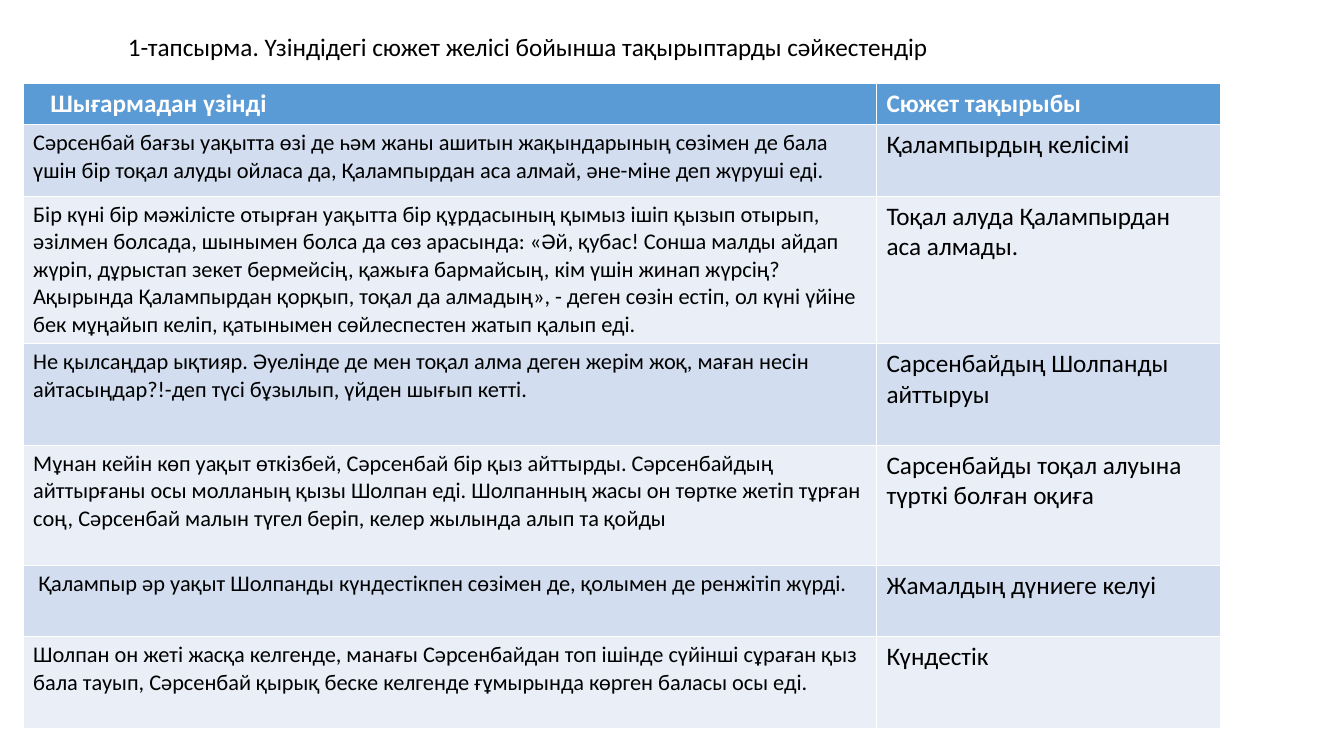
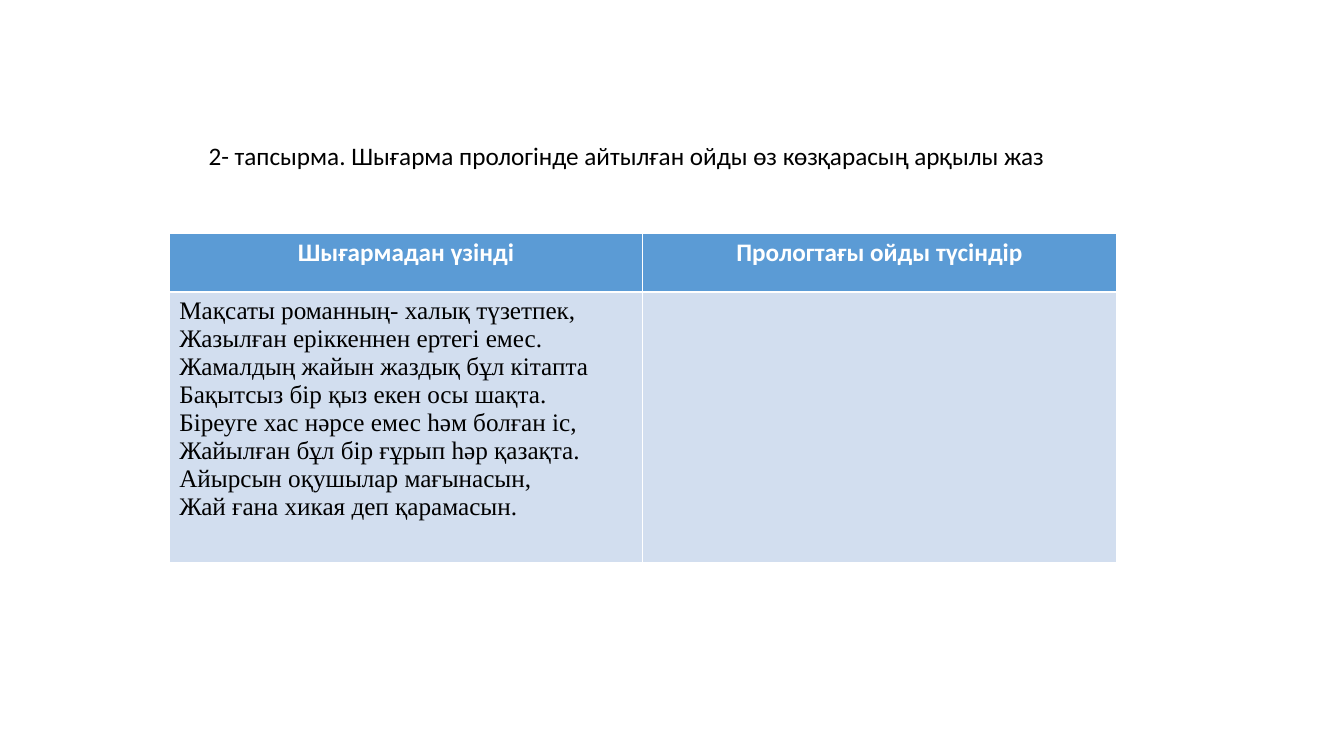
from dataclasses import dataclass

from lxml import etree
from pptx import Presentation
from pptx.dml.color import RGBColor
from pptx.enum.text import MSO_ANCHOR, MSO_AUTO_SIZE, PP_ALIGN
from pptx.oxml.ns import qn
from pptx.util import Emu, Pt

LEFT, CENTER = PP_ALIGN.LEFT, PP_ALIGN.CENTER
TOP, NO_FIT = MSO_ANCHOR.TOP, MSO_AUTO_SIZE.NONE
TITLE_ONLY = 5
PX = 9144


@dataclass(frozen=True)
class Theme:
    font: str = "Calibri"
    verse_font: str = "Times New Roman"
    text: str = "000000"
    white: str = "FFFFFF"
    header: str = "5B9BD5"
    bands: tuple = ("D2DEEF", "EAEFF7")
    size: int = 18
    excerpt_size: int = 16
    thin: float = 0.45
    thick: float = 1.47


T = Theme()

SLIDES = [
    {
        "title": "1-тапсырма. Үзіндідегі сюжет желісі бойынша тақырыптарды сәйкестендір",
        "title_box": (117, 26, 914, 40),
        "origin": (23, 83),
        "cols": (847, 341),
        "row_heights": (40, 71, 146, 101, 119, 71, 91),
        "head_formats": ({"indent": 17}, {}),
        "body_formats": ({"size": T.excerpt_size}, {}),
        "indents": {(5, 0): 5},
        "rows": [
            (["Шығармадан үзінді"], ["Сюжет тақырыбы"]),
            (["Сәрсенбай бағзы уақытта ѳзі де һәм жаны ашитын жақындарының сѳзімен де бала үшін бір тоқал алуды ойласа да, Қалампырдан аса алмай, әне-міне деп жүруші еді."],
             ["Қалампырдың келісімі"]),
            (["Бір күні бір мәжілісте отырған уақытта бір құрдасының қымыз ішіп қызып отырып, әзілмен болсада, шынымен болса да сѳз арасында: «Әй, қубас! Сонша малды айдап жүріп, дұрыстап зекет бермейсің, қажыға бармайсың, кім үшін жинап жүрсің? Ақырында Қалампырдан қорқып, тоқал да алмадың», - деген сѳзін естіп, ол күні үйіне бек мұңайып келіп, қатынымен сѳйлеспестен жатып қалып еді."],
             ["Тоқал алуда Қалампырдан аса алмады."]),
            (["He қылсаңдар ықтияр. Әуелінде де мен тоқал алма деген жерім жоқ, маған несін айтасыңдар?!-деп түсі бұзылып, үйден шығып кетті."],
             ["Сарсенбайдың Шолпанды айттыруы"]),
            (["Мұнан кейін кѳп уақыт ѳткізбей, Сәрсенбай бір қыз айттырды. Сәрсенбайдың айттырғаны осы молланың қызы Шолпан еді. Шолпанның жасы он тѳртке жетіп тұрған соң, Сәрсенбай малын түгел беріп, келер жылында алып та қойды"],
             ["Сарсенбайды тоқал алуына түрткі болған оқиға"]),
            (["Қалампыр әр уақыт Шолпанды күндестікпен сѳзімен де, қолымен де ренжітіп жүрді."],
             ["Жамалдың дүниеге келуі"]),
            (["Шолпан он жеті жасқа келгенде, манағы Сәрсенбайдан топ ішінде сүйінші сұраған қыз бала тауып, Сәрсенбай қырық беске келгенде ғұмырында кѳрген баласы осы еді."],
             ["Күндестік"]),
        ],
    },
    {
        "title": "2- тапсырма. Шығарма прологінде айтылған ойды өз көзқарасың арқылы жаз",
        "title_box": (197, 134, 855, 40),
        "origin": (168, 231),
        "cols": (470, 470),
        "row_heights": (59, 268),
        "head_formats": ({"align": CENTER}, {"align": CENTER}),
        "body_formats": ({"font": T.verse_font}, {}),
        "indents": {},
        "rows": [
            (["Шығармадан үзінді"], ["Прологтағы ойды түсіндір"]),
            (["Мақсаты романның- халық түзетпек, Жазылған еріккеннен ертегі емес.",
              "Жамалдың жайын жаздық бұл кітапта Бақытсыз бір қыз екен осы шақта.",
              "Біреуге хас нәрсе емес һәм болған іс, Жайылған бұл бір ғұрып һәр қазақта.",
              "Айырсын оқушылар мағынасын,",
              "Жай ғана хикая деп қарамасын."],
             []),
        ],
    },
]


def px(n):
    return Emu(n * PX)


def write(tf, lines, font=T.font, size=T.size, color=T.text, bold=False,
          align=LEFT, indent=0):
    for i, line in enumerate(lines):
        p = tf.add_paragraph() if i else tf.paragraphs[0]
        p.alignment = align
        if indent:
            p._p.get_or_add_pPr().set("indent", str(px(indent)))
        r = p.add_run()
        r.text = line
        r.font.name = font
        r.font.size = Pt(size)
        r.font.bold = bold
        r.font.color.rgb = RGBColor.from_string(color)


def style_cell(cell, fill, top, bottom):
    tcPr = cell._tc.get_or_add_tcPr()
    for side, width in (("L", T.thin), ("R", T.thin), ("T", top), ("B", bottom)):
        ln = etree.SubElement(tcPr, qn(f"a:ln{side}"), w=str(Pt(width)))
        solid = etree.SubElement(ln, qn("a:solidFill"))
        etree.SubElement(solid, qn("a:srgbClr"), val=T.white)
    cell.fill.solid()
    cell.fill.fore_color.rgb = RGBColor.from_string(fill)


def add_title(s, text, box):
    sp = s.shapes.title
    sp.left, sp.top, sp.width, sp.height = map(px, box)
    tf = sp.text_frame
    tf.word_wrap = True
    tf.auto_size = NO_FIT
    tf.vertical_anchor = TOP
    write(tf, [text])


def add_table(s, data):
    rows, cols, heights = data["rows"], data["cols"], data["row_heights"]
    box = (*data["origin"], sum(cols), sum(heights))
    table = s.shapes.add_table(len(rows), len(cols), *map(px, box)).table
    table.horz_banding = False
    for col, width in zip(table.columns, cols):
        col.width = px(width)
    for i, (row, height) in enumerate(zip(rows, heights)):
        table.rows[i].height = px(height)
        head = i == 0
        fill = T.header if head else T.bands[(i - 1) % 2]
        for j, lines in enumerate(row):
            cell = table.cell(i, j)
            style_cell(cell, fill, T.thick if i == 1 else T.thin,
                       T.thick if head else T.thin)
            if head:
                fmt = {"color": T.white, "bold": True, **data["head_formats"][j]}
            else:
                fmt = {"indent": data["indents"].get((i, j), 0),
                       **data["body_formats"][j]}
            write(cell.text_frame, lines, **fmt)


def main():
    prs = Presentation()
    prs.slide_width, prs.slide_height = px(1334), px(750)
    for data in SLIDES:
        s = prs.slides.add_slide(prs.slide_layouts[TITLE_ONLY])
        add_title(s, data["title"], data["title_box"])
        add_table(s, data)
    prs.save("out.pptx")


if __name__ == "__main__":
    main()
